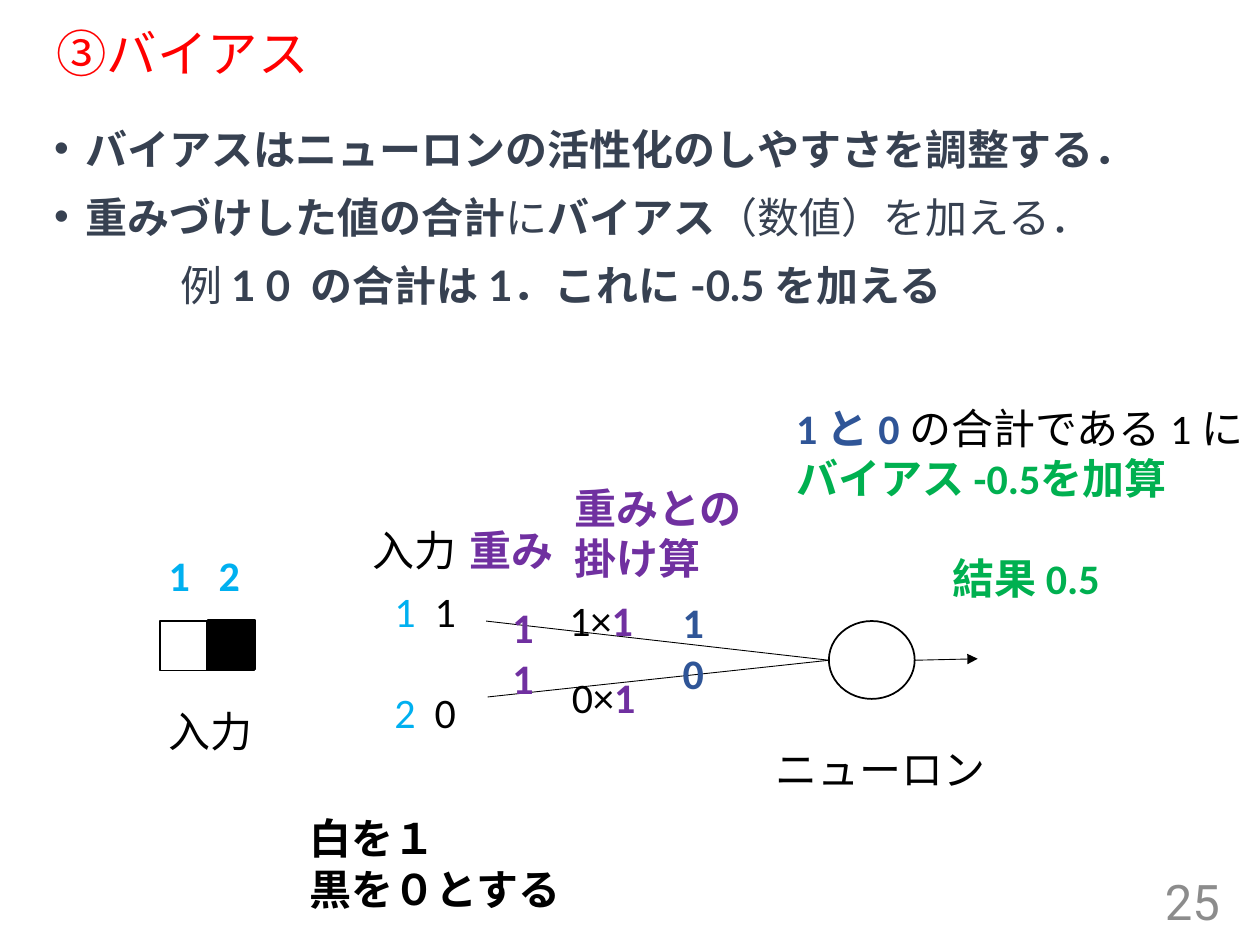
from dataclasses import dataclass

from lxml.etree import SubElement
from pptx import Presentation
from pptx.dml.color import RGBColor
from pptx.enum.shapes import MSO_CONNECTOR as CONN, MSO_SHAPE as SHAPE
from pptx.enum.text import MSO_ANCHOR as ANCHOR, MSO_AUTO_SIZE as AUTO, PP_ALIGN as ALIGN
from pptx.oxml.ns import qn
from pptx.util import Cm, Pt


@dataclass(frozen=True)
class Theme:
    red: str = "FF0000"
    slate: str = "374151"
    grey: str = "8C8C8C"
    black: str = "000000"
    navy: str = "2F5597"
    green: str = "00B050"
    sky: str = "00B0F0"
    purple: str = "7030A0"
    title: float = 28.8
    number: float = 28
    body: float = 24
    line: float = 1
    thin: float = 0.5


T = Theme()
prs = Presentation()
prs.slide_width, prs.slide_height = Cm(25.4), Cm(19.05)
s = prs.slides.add_slide(prs.slide_layouts[6])


def add_text(box, paragraphs, font="Calibri", size=T.body, anchor=ANCHOR.TOP):
    sp = s.shapes.add_textbox(*map(Cm, box))
    tf = sp.text_frame
    tf.word_wrap = True
    tf.vertical_anchor = anchor
    for i, runs in enumerate(paragraphs):
        p = tf.add_paragraph() if i else tf.paragraphs[0]
        for text, color, bold in runs:
            r = p.add_run()
            r.text = text
            r.font.name, r.font.size, r.font.bold = font, Pt(size), bold
            r.font.color.rgb = RGBColor.from_string(color)
    return tf


def add_tab(p, pos):
    tabs = SubElement(p._p.get_or_add_pPr(), qn("a:tabLst"))
    SubElement(tabs, qn("a:tab"), pos=str(Cm(pos)), algn="l")


title = add_text((0.89, 0.48, 23.5, 1.3), [[("③バイアス", T.red, False)]],
                 "Roboto", T.title, ANCHOR.MIDDLE)
title.paragraphs[0].line_spacing = 0.9

body = add_text((0.84, 2.36, 23.5, 14.81), [
    [("バイアスはニューロンの活性化のしやすさを調整する．", T.slate, True)],
    [("重みづけした値の合計", T.slate, True), ("に", T.slate, False),
     ("バイアス", T.slate, True), ("（数値）を加える．", T.slate, False)],
    [("\t例 ", T.slate, False),
     ("1 0  の合計は 1．これに -0.5 を加える", T.slate, True)],
], "Lato")
for p in body.paragraphs:
    p.space_before = Pt(10)
for p in body.paragraphs[:2]:
    pPr = p._p.get_or_add_pPr()
    pPr.set("marL", str(Cm(0.64)))
    pPr.set("indent", str(-Cm(0.64)))
    SubElement(pPr, qn("a:buFont"), typeface="Arial")
    SubElement(pPr, qn("a:buChar"), char="•")
add_tab(body.paragraphs[2], 2.54)

number = add_text((17.65, 17.65, 5.72 + 1.47, 1.02), [[("25", T.grey, False)]],
                  "Roboto", T.number, ANCHOR.MIDDLE)
number.paragraphs[0].alignment = ALIGN.RIGHT

for kind, x, y, w, h, fill in [
    (SHAPE.RECTANGLE, 4.19, 12.5, 0.95, 1, T.black),
    (SHAPE.RECTANGLE, 3.23, 12.52, 0.95, 1, None),
    (SHAPE.RECTANGLE, 4.17, 12.52, 0.95, 1, None),
    (SHAPE.OVAL, 16.71, 12.52, 1.73, 1.57, None),
]:
    sp = s.shapes.add_shape(kind, *map(Cm, (x, y, w, h)))
    sp.shadow.inherit = False
    sp.line.color.rgb = RGBColor.from_string(T.black)
    sp.line.width = Pt(T.line)
    if fill:
        sp.fill.solid()
        sp.fill.fore_color.rgb = RGBColor.from_string(fill)
    else:
        sp.fill.background()

for x1, y1, x2, y2, arrow in [
    (9.8, 12.52, 16.71, 13.31, False),
    (9.83, 14.05, 16.71, 13.31, False),
    (18.42, 13.31, 19.71, 13.28, True),
]:
    line = s.shapes.add_connector(CONN.STRAIGHT, *map(Cm, (x1, y1, x2, y2)))
    line.line.color.rgb = RGBColor.from_string(T.black)
    line.line.width = Pt(T.thin)
    if arrow:
        SubElement(line.line._get_or_add_ln(), qn("a:tailEnd"), type="triangle")
    SubElement(line._element.spPr, qn("a:effectLst"))

for box, paragraphs, tab in [
    ((15.8, 7.98, 9.6, 2.31),
     [[("1 と 0", T.navy, True), (" の合計である 1 に", T.black, False)],
      [("バイアス -0.5を加算", T.green, True)]], None),
    ((18.95, 11.02, 3.51, 1.27), [[("結果 0.5", T.green, True)]], None),
    ((3.15, 14.1, 2.24, 1.27), [[("入力", T.black, False)]], None),
    ((3.15, 10.95, 1.96, 1.27), [[("1\t2", T.sky, True)]], 1.01),
    ((7.7, 11.68, 1.75, 3.33),
     [[(n, T.sky, False), (f"\t{value}", T.black, False)]
      for n, value in (("1", 1), ("2", 0))], 0.81),
    ((9.22, 10.44, 2.24, 1.27), [[("重み", T.purple, True)]], None),
    ((11.23, 11.86, 2.24, 1.27), [[("1×", T.black, False), ("1", T.purple, True)]], None),
    ((11.28, 13.41, 2.24, 1.27), [[("0×", T.black, False), ("1", T.purple, True)]], None),
    ((10.08, 12.01, 1.14, 3.33), [[("1", T.purple, True)]] * 2, None),
    ((11.33, 9.6, 3.94, 2.31),
     [[("重みとの", T.purple, True)], [("掛け算", T.purple, True)]], None),
    ((13.51, 11.91, 1.14, 3.33), [[(n, T.navy, True)] for n in "10"], None),
    ((7.26, 10.44, 2.24, 1.27), [[("入力", T.black, False)]], None),
    ((15.39, 14.86, 4.78, 1.27), [[("ニューロン", T.black, False)]], None),
    ((5.99, 16.26, 5.64, 2.31),
     [[("白を１", T.black, True)], [("黒を０とする", T.black, True)]], None),
]:
    tf = add_text(box, paragraphs)
    tf.auto_size = AUTO.SHAPE_TO_FIT_TEXT
    if tab:
        for p in tf.paragraphs:
            add_tab(p, tab)
        for p in tf.paragraphs[1:]:
            p.space_before = Pt(29)

prs.save("out.pptx")
